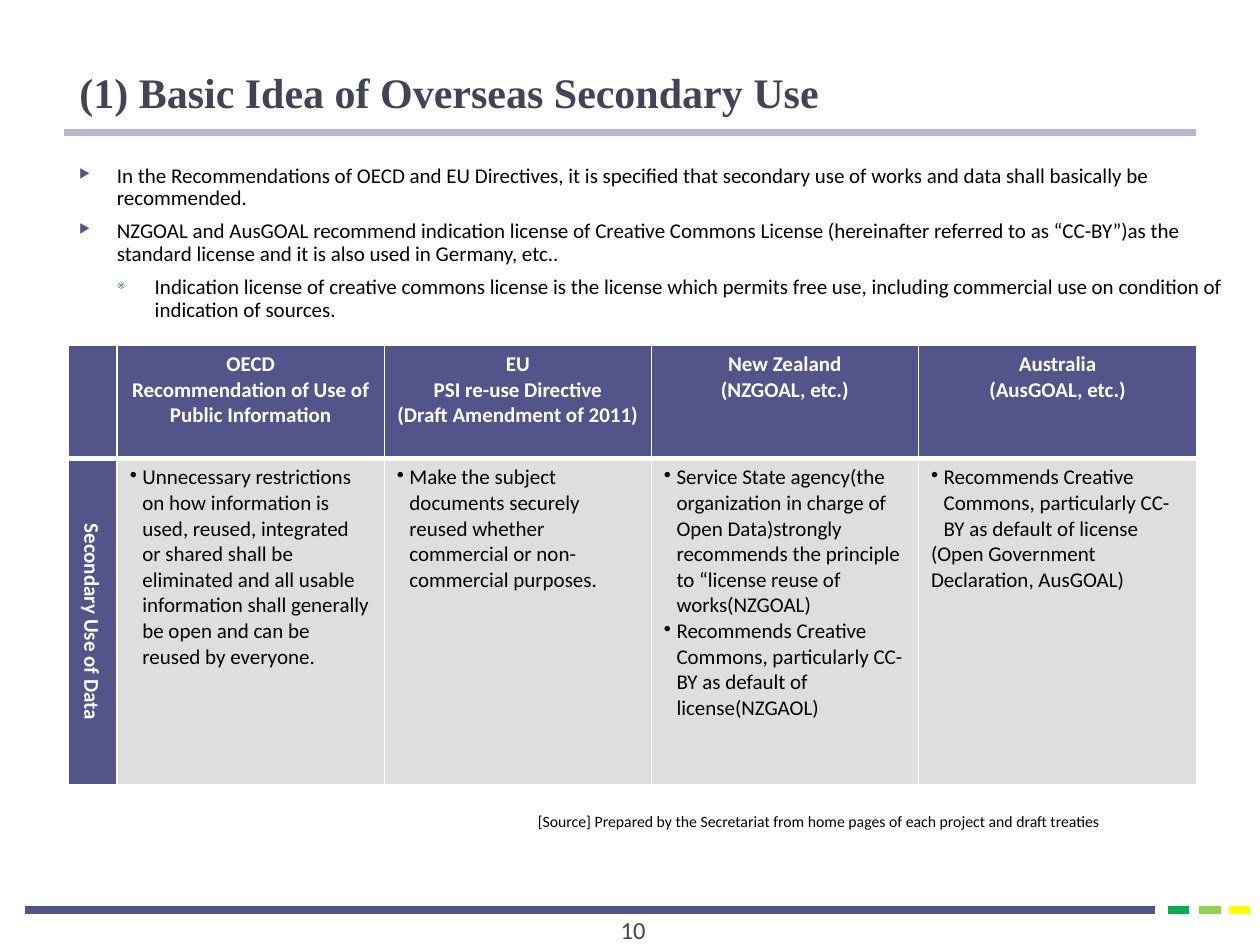
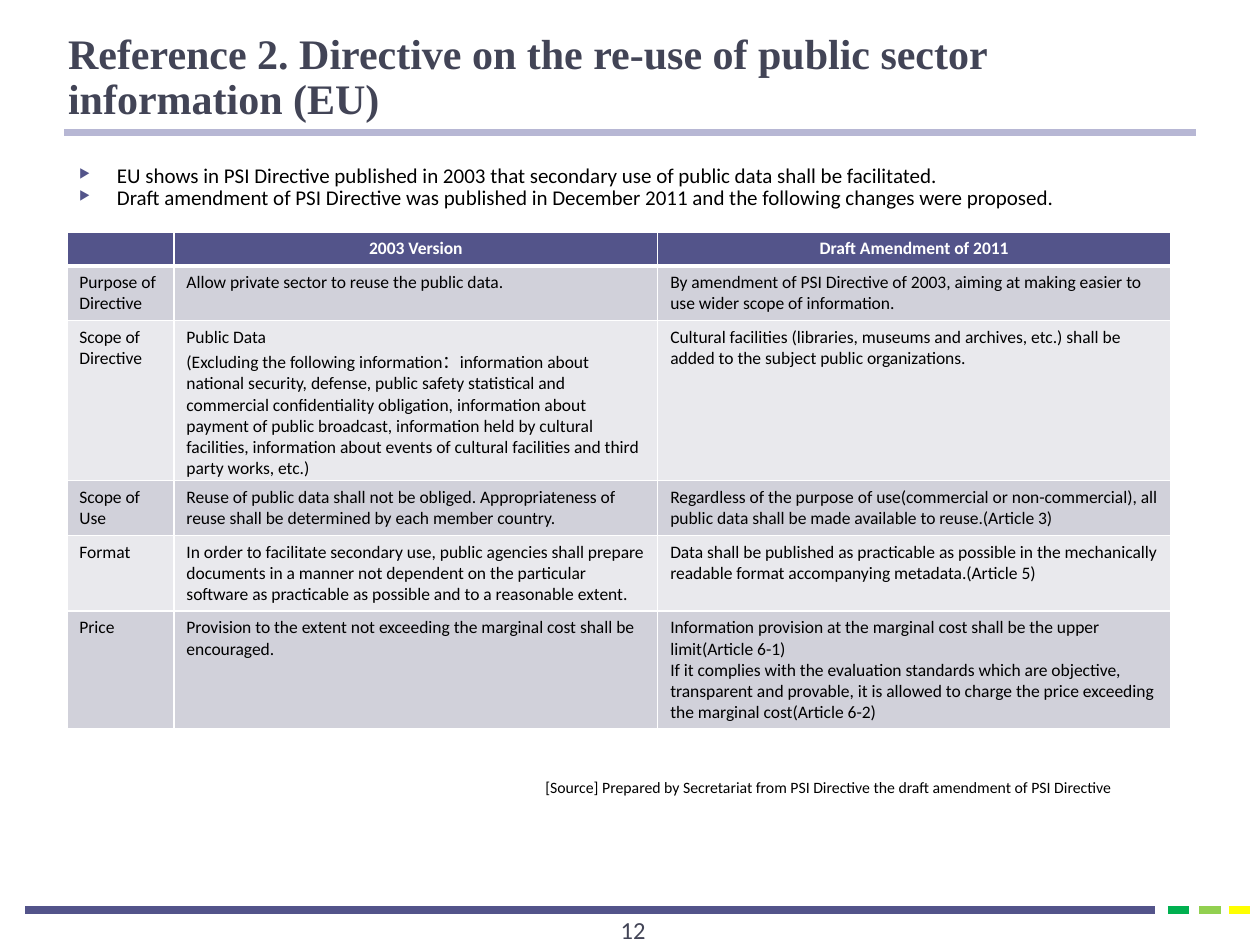
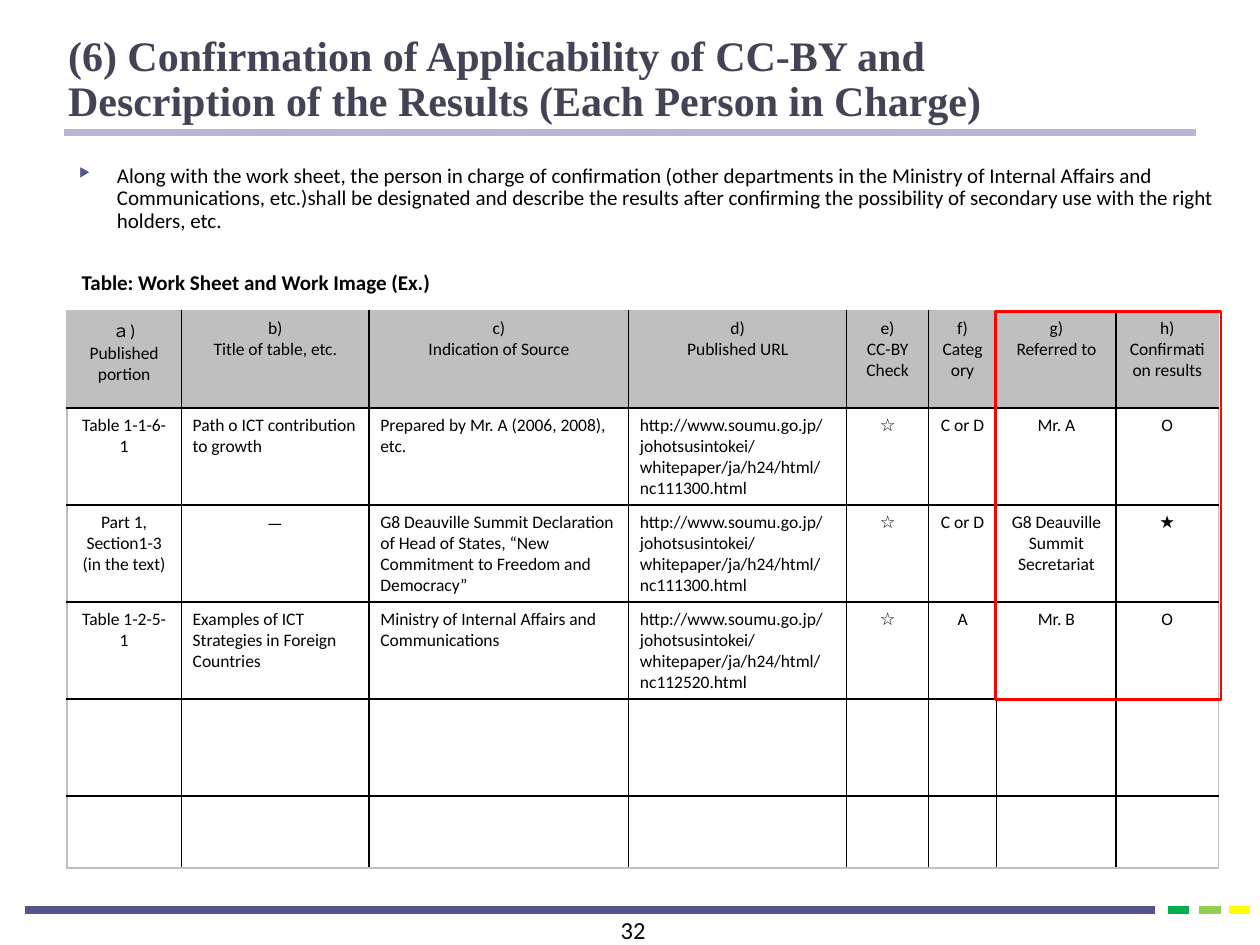
from lxml import etree
from pptx import Presentation
from pptx.dml.color import RGBColor
from pptx.enum import shapes, text
from pptx.oxml import ns
from pptx.util import Inches, Pt

INDIGO, LAVENDER, SLATE = "53548A", "B7B7D4", "424456"
BLACK, WHITE, GREY = "000000", "FFFFFF", "BFBFBF"
SERIF, SANS = "Times New Roman", "Calibri"
LEFT, CENTER = text.PP_ALIGN.LEFT, text.PP_ALIGN.CENTER
RULES = [  # start, end, height, colour, weight
    (0.2, 9.17, 7.22, INDIGO, 4.5),
    (9.27, 9.44, 7.22, "00B050", 4.5),
    (9.52, 9.69, 7.22, "92D050", 4.5),
    (9.75, 9.92, 7.22, "FFFF00", 4.5),
    (0.51, 9.49, 1.05, LAVENDER, 4.25),
]
BULLETS = {  # margin, hanging indent, colour, percent of text size
    "▶": (0.3, 0.3, INDIGO, 60),
    "※": (0.6, 0.3, "438086", 50),
    "•": (0.1, 0.1, BLACK, 100),
}


def write(frame, lines, size=12, color=BLACK, bold=False, font=SANS,
          align=LEFT, spacing=None, before=0):
    """Append one paragraph per line; a leading bullet sign makes it a list item."""
    for line in lines.split("\n"):
        first = not frame.text
        paragraph = frame.paragraphs[0] if first else frame.add_paragraph()
        if line[:1] in BULLETS:
            margin, hang, tint, percent = BULLETS[line[0]]
            props = paragraph._p.get_or_add_pPr()
            props.set("marL", str(Inches(margin)))
            props.set("indent", str(-Inches(hang)))
            fill = etree.SubElement(props, ns.qn("a:buClr"))
            etree.SubElement(fill, ns.qn("a:srgbClr"), val=tint)
            etree.SubElement(props, ns.qn("a:buSzPct"), val=str(percent * 1000))
            etree.SubElement(props, ns.qn("a:buChar"), char=line[0])
            line = line[1:]
        paragraph.alignment = align
        if spacing:
            paragraph.line_spacing = spacing
        if before and not first:
            paragraph.space_before = Pt(before)
        paragraph.text = line
        for run in paragraph.runs:
            run.font.name, run.font.size, run.font.bold = font, Pt(size), bold
            run.font.color.rgb = RGBColor.from_string(color)
        if not line:
            paragraph._p.get_or_add_endParaRPr().set("sz", str(size * 100))


def add_grid(slide, left, top, widths, heights, rows, fills, border,
             outer=None, size=10, side_fill=None, centered=(), inset=0.1):
    """Draw a table; indigo cells are headings, set in bold white."""
    table = slide.shapes.add_table(
        len(rows), len(widths), Inches(left), Inches(top),
        Inches(sum(widths)), Inches(sum(heights))).table
    table.first_row = table.horz_banding = False
    for column, width in zip(table.columns, widths):
        column.width = Inches(width)
    for r, (row, height) in enumerate(zip(rows, heights)):
        table.rows[r].height = Inches(height)
        for c, content in enumerate(row):
            cell = table.cell(r, c)
            cell.margin_left = cell.margin_right = Inches(inset)
            fill = side_fill if side_fill and c == 0 else fills[r]
            heading = fill == INDIGO
            middle = heading or r == 0 or c in centered
            write(cell.text_frame, content, size=size, bold=heading,
                  color=WHITE if heading else BLACK,
                  align=CENTER if middle else LEFT)
            on_edge = {"L": c == 0, "R": c == len(widths) - 1,
                       "T": r == 0, "B": r == len(rows) - 1}
            for side, outside in on_edge.items():
                thick = fills[0] == INDIGO and (r, side) in ((0, "B"), (1, "T"))
                edge = etree.SubElement(cell._tc.get_or_add_tcPr(), ns.qn("a:ln" + side),
                                        w=str(Pt(3 if thick else 1)))
                paint = etree.SubElement(edge, ns.qn("a:solidFill"))
                etree.SubElement(paint, ns.qn("a:srgbClr"),
                                 val=outer if outer and outside else border)
            if fill:
                cell.fill.solid()
                cell.fill.fore_color.rgb = RGBColor.from_string(fill)
            else:
                cell.fill.background()
    return table


deck = Presentation()
deck.slide_width, deck.slide_height = Inches(10), Inches(7.5)

# Title, its box, page number and its colour, then loose texts with box and format
BODY = dict(spacing=0.9)
pages = [
    ("(1) Basic Idea of Overseas Secondary Use", (0.53, 0.18, 8.92, 0.8), "10", SLATE, [
        ((0.53, 1.26, 9.47, 0.89), dict(spacing=0.9, before=6),
         "▶In the Recommendations of OECD and EU Directives, it is specified that secondary use of "
         "works and data shall basically be recommended.\n"
         "▶NZGOAL and AusGOAL recommend indication license of Creative Commons License (hereinafter "
         "referred to as “CC-BY”)as the standard license and it is also used in Germany, etc..\n"
         "※Indication license of creative commons license is the license which permits free use, "
         "including commercial use on condition of indication of sources."),
        ((4.17, 6.39, 5.35, 0.25), dict(size=9),
         "[Source] Prepared by the Secretariat from home pages of each project and draft treaties"),
    ]),
    ("Reference 2. Directive on the re-use of public sector information (EU)",
     (0.44, 0.18, 7.9, 0.85), "12", SLATE, [
        ((0.53, 1.26, 8.94, 0.89), BODY,
         "▶EU shows in PSI Directive published in 2003 that secondary use of public data shall be "
         "facilitated.\n"
         "▶Draft amendment of PSI Directive was published in December 2011 and the following changes "
         "were proposed."),
        ((4.23, 6.12, 5.27, 0.25), dict(size=9),
         "[Source] Prepared by Secretariat from PSI Directive the draft amendment of PSI Directive"),
     ]),
    ("(6) Confirmation of Applicability of CC-BY and\vDescription of the Results "
     "(Each Person in Charge)", (0.44, 0.18, 9, 0.87), "32", BLACK, [
        ((0.53, 1.26, 9.34, 0.64), BODY,
         "▶Along with the work sheet, the person in charge of confirmation (other departments in the "
         "Ministry of Internal Affairs and Communications, etc.)shall be designated and describe the "
         "results after confirming the possibility of secondary use with the right holders, etc."),
        ((0.55, 2.09, 3.07, 0.3), dict(bold=True), "Table: Work Sheet and Work Image (Ex.)"),
     ]),
]

for heading, title_box, number, number_color, passages in pages:
    slide = deck.slides.add_slide(deck.slide_layouts[5])
    for start, end, height, color, weight in RULES:
        rule = slide.shapes.add_connector(
            shapes.MSO_CONNECTOR.STRAIGHT, Inches(start), Inches(height), Inches(end), Inches(height))
        rule.line.color.rgb = RGBColor.from_string(color)
        rule.line.width = Pt(weight)
        etree.SubElement(rule._element.spPr, ns.qn("a:effectLst"))
    title = slide.shapes.title
    title.left, title.top, title.width, title.height = map(Inches, title_box)
    title.text_frame.auto_size = text.MSO_AUTO_SIZE.NONE
    title.text_frame.vertical_anchor = text.MSO_ANCHOR.BOTTOM
    write(title.text_frame, heading, size=24, color=SLATE, bold=True, font=SERIF, spacing=0.9)
    page_number = ((3.94, 7.21, 2.17, 0.4), dict(size=14, color=number_color, align=CENTER), number)
    for box, style, words in [page_number, *passages]:
        frame = slide.shapes.add_textbox(*map(Inches, box)).text_frame
        frame.word_wrap = True
        write(frame, words, **style)

overseas, directive, worksheet = deck.slides

# Secondary use policies by body
add_grid(
    overseas, 0.54, 2.74, [0.39, 2.12, 2.12, 2.12, 2.21], [0.9, 2.59], [
        ["", "OECD\nRecommendation of Use of Public Information",
         "EU\nPSI re-use Directive\n(Draft Amendment of 2011)",
         "New Zealand\n(NZGOAL, etc.)", "Australia\n(AusGOAL, etc.)"],
        ["",
         "•Unnecessary restrictions on how information is used, reused, integrated or shared shall be "
         "eliminated and all usable information shall generally be open and can be reused by everyone.",
         "•Make the subject documents securely reused whether commercial or non-commercial purposes.",
         "•Service State agency(the organization in charge of Open Data)strongly recommends the "
         "principle to “license reuse of works(NZGOAL)\n"
         "•Recommends Creative Commons, particularly CC-BY as default of license(NZGAOL)",
         "•Recommends Creative Commons, particularly CC-BY as default of license\n"
         "(Open Government Declaration, AusGOAL)"],
    ], [INDIGO, "DEDEDE"], WHITE, size=12, side_fill=INDIGO)

# The row label runs downwards over the first column
row_label = overseas.shapes.add_textbox(
    Inches(0.54), Inches(3.64), Inches(0.39), Inches(2.59)).text_frame
row_label.margin_left = row_label.margin_right = 0
row_label.word_wrap = True
row_label.vertical_anchor = text.MSO_ANCHOR.MIDDLE
row_label._txBody.bodyPr.set("vert", "vert")
write(row_label, "Secondary Use of Data", color=WHITE, bold=True, align=CENTER)

# Directive versions compared
DARK_BAND, LIGHT_BAND = "D1D1DA", "E9E9ED"
add_grid(
    directive, 0.53, 1.84, [0.85, 3.84, 4.07], [0.27, 0.43, 1.27, 0.43, 0.6, 0.93], [
        ["", "2003 Version", "Draft Amendment of 2011"],
        ["Purpose of Directive", "Allow private sector to reuse the public data.",
         "By amendment of PSI Directive of 2003, aiming at making easier to use wider scope of "
         "information."],
        ["Scope of Directive",
         "Public Data\n(Excluding the following information：information about national security, "
         "defense, public safety statistical and commercial confidentiality obligation, information "
         "about payment of public broadcast, information held by cultural facilities, information "
         "about events of cultural facilities and third party works, etc.)",
         "Cultural facilities (libraries, museums and archives, etc.) shall be added to the subject "
         "public organizations."],
        ["Scope of Use",
         "Reuse of public data shall not be obliged. Appropriateness of reuse shall be determined by "
         "each member country.",
         "Regardless of the purpose of use(commercial or non-commercial), all public data shall be "
         "made available to reuse.(Article 3)"],
        ["Format",
         "In order to facilitate secondary use, public agencies shall prepare documents in a manner "
         "not dependent on the particular software as practicable as possible and to a reasonable "
         "extent.",
         "Data shall be published as practicable as possible in the mechanically readable format "
         "accompanying metadata.(Article 5)"],
        ["Price", "Provision to the extent not exceeding the marginal cost shall be encouraged.",
         "Information provision at the marginal cost shall be the upper limit(Article 6-1)\n"
         "If it complies with the evaluation standards which are objective, transparent and provable, "
         "it is allowed to charge the price exceeding the marginal cost(Article 6-2)"],
    ], [INDIGO, DARK_BAND, LIGHT_BAND, DARK_BAND, LIGHT_BAND, DARK_BAND], WHITE)

# Work sheet with the columns to be filled in framed
URL = "http://www.soumu.go.jp/johotsusintokei/whitepaper/ja/h24/html/"
works = add_grid(
    worksheet, 0.53, 2.47, [0.91, 1.49, 2.06, 1.73, 0.65, 0.54, 0.95, 0.81], [0.77] * 5 + [0.57], [
        ["ａ)\nPublished portion", "b)\nTitle of table, etc.", "c)\nIndication of Source",
         "d)\nPublished URL", "e)\nCC-BY\nCheck", "f)\nCategory", "g)\nReferred to",
         "h)\nConfirmation results"],
        ["Table 1-1-6-1", "Path o ICT contribution to growth", "Prepared by Mr. A (2006, 2008), etc.",
         URL + "nc111300.html", "☆", "C or D", "Mr. A", "O"],
        ["Part 1, Section1-3\n(in the text)", "－",
         "G8 Deauville Summit Declaration of Head of States, “New Commitment to Freedom and Democracy”",
         URL + "nc111300.html", "☆", "C or D", "G8 Deauville Summit Secretariat", "★"],
        ["Table 1-2-5-1", "Examples of ICT Strategies in Foreign Countries",
         "Ministry of Internal Affairs and Communications",
         URL + "nc112520.html", "☆", "A", "Mr. B", "O"],
        [""] * 8,
        [""] * 8,
    ], [GREY] + [None] * 5, BLACK, outer=GREY, centered=(0, 4, 5, 6, 7), inset=0.09)
works.cell(2, 1).text_frame.paragraphs[0].alignment = CENTER

results_frame = worksheet.shapes.add_shape(
    shapes.MSO_SHAPE.RECTANGLE, Inches(7.9), Inches(2.47), Inches(1.79), Inches(3.08))
results_frame.shadow.inherit = False
results_frame.fill.background()
results_frame.line.color.rgb = RGBColor.from_string("FF0000")
results_frame.line.width = Pt(1.5)

deck.save("out.pptx")
